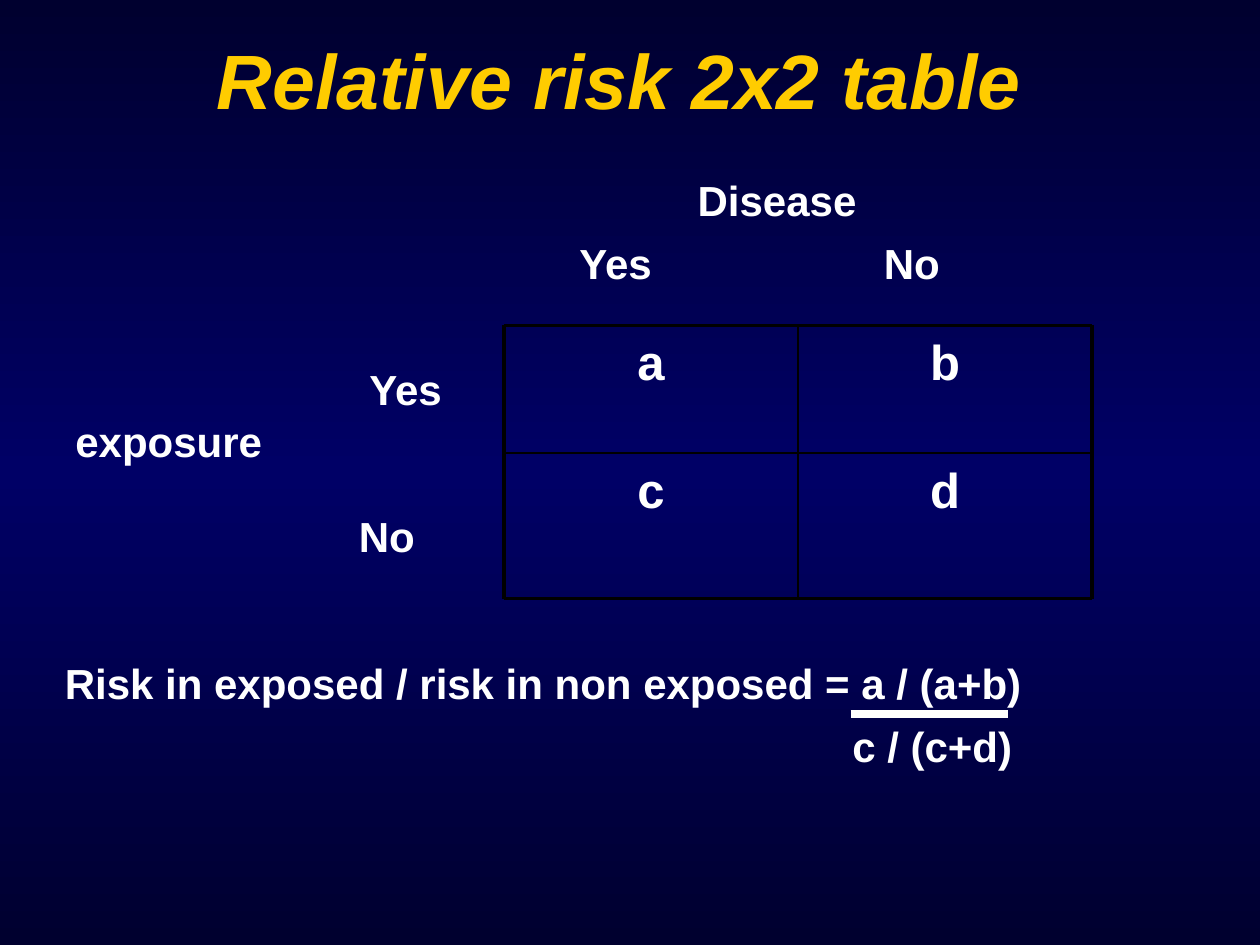
import copy
import itertools
from dataclasses import dataclass

import pptx
import pptx.dml.color
import pptx.enum.shapes
import pptx.enum.text
import pptx.oxml
import pptx.oxml.ns
import pptx.util

Pt = pptx.util.Pt
ALIGN = pptx.enum.text.PP_ALIGN
ANCHOR = pptx.enum.text.MSO_ANCHOR
qn = pptx.oxml.ns.qn


@dataclass(frozen=True)
class Theme:
    font: str = "Arial"
    title_color: str = "FFCC00"
    text_color: str = "FFFFFF"
    grid_color: str = "000000"
    background: tuple = ("00002F", "000066", "00002F")
    title_size: float = 44
    cell_size: float = 28
    label_size: float = 24
    outer_line: float = 2.25
    inner_line: float = 1
    fraction_line: float = 4.5


def rgb(color):
    return pptx.dml.color.RGBColor.from_string(color)


def write(frame, text, *, font, size, color, italic=False, align=ALIGN.LEFT):
    paragraph = frame.paragraphs[0]
    paragraph.alignment = align
    run = paragraph.add_run()
    run.text = text
    run.font.name = font
    run.font.size = Pt(size)
    run.font.bold = True
    run.font.italic = italic
    run.font.color.rgb = rgb(color)


class SlideBuilder:
    def __init__(self, slide, theme):
        self.slide = slide
        self.theme = theme

    def background(self):
        fill = self.slide.background.fill
        fill.gradient()
        fill.gradient_angle = 270
        stops = self.slide.element.find(".//" + qn("a:gsLst"))
        stops.append(copy.deepcopy(stops[0]))
        for index, color in enumerate(self.theme.background):
            stop = fill.gradient_stops[index]
            stop.color.rgb = rgb(color)
            stop.position = index / 2

    def text_box(self, left, top, width, height):
        frame = self.slide.shapes.add_textbox(
            Pt(left), Pt(top), Pt(width), Pt(height)).text_frame
        frame.word_wrap = True
        return frame

    def title(self, text, left, top, width, height):
        frame = self.text_box(left, top, width, height)
        frame.vertical_anchor = ANCHOR.MIDDLE
        write(frame, text, font=self.theme.font, size=self.theme.title_size,
              color=self.theme.title_color, italic=True, align=ALIGN.CENTER)

    def label(self, text, left, top, width, align=ALIGN.LEFT):
        frame = self.text_box(left, top, width, 36)
        frame.auto_size = pptx.enum.text.MSO_AUTO_SIZE.SHAPE_TO_FIT_TEXT
        write(frame, text, font=self.theme.font, size=self.theme.label_size,
              color=self.theme.text_color, align=align)

    def line(self, start, end, color, width):
        connector = self.slide.shapes.add_connector(
            pptx.enum.shapes.MSO_CONNECTOR.STRAIGHT,
            Pt(start[0]), Pt(start[1]), Pt(end[0]), Pt(end[1]))
        connector.line.color.rgb = rgb(color)
        connector.line.width = Pt(width)
        connector._element.spPr.append(pptx.oxml.parse_xml(
            f'<a:effectLst {pptx.oxml.ns.nsdecls("a")}/>'))

    def ruled_grid(self, rows, xs, ys):
        """Place the cell texts between the grid lines at xs and ys."""
        theme = self.theme
        for values, (top, bottom) in zip(rows, itertools.pairwise(ys)):
            for value, (left, right) in zip(values, itertools.pairwise(xs)):
                frame = self.text_box(left, top, right - left, bottom - top)
                write(frame, value, font=theme.font, size=theme.cell_size,
                      color=theme.text_color, align=ALIGN.CENTER)

        def weight(position, positions):
            is_edge = position in (positions[0], positions[-1])
            return theme.outer_line if is_edge else theme.inner_line

        for y in ys:
            self.line((xs[0], y), (xs[-1], y), theme.grid_color, weight(y, ys))
        for x in xs:
            self.line((x, ys[0]), (x, ys[-1]), theme.grid_color, weight(x, xs))

    def fraction_bar(self, left, right, y):
        self.line((left, y), (right, y), self.theme.text_color, self.theme.fraction_line)


def main():
    presentation = pptx.Presentation()
    presentation.slide_width = Pt(720)
    presentation.slide_height = Pt(540)
    slide = presentation.slides.add_slide(presentation.slide_layouts[6])
    builder = SlideBuilder(slide, Theme())

    builder.background()
    builder.title("Relative risk 2x2 table", 30, 0, 648, 90)
    builder.ruled_grid([["a", "b"], ["c", "d"]],
                       xs=[288, 456, 624], ys=[186, 259, 342])

    builder.label("Disease", 360, 96, 168, align=ALIGN.CENTER)
    builder.label("Yes", 324, 132, 72)
    builder.label("No", 498, 132, 78)

    builder.label("exposure", 36, 234, 144)
    builder.label("Yes", 204, 204, 60)
    builder.label("No", 198, 288, 60)

    builder.label("Risk in exposed / risk in non exposed = a / (a+b)", 30, 372, 642)
    builder.fraction_bar(486, 576, 408)
    builder.label("c / (c+d)", 480, 408, 114)

    presentation.save("out.pptx")


if __name__ == "__main__":
    main()
